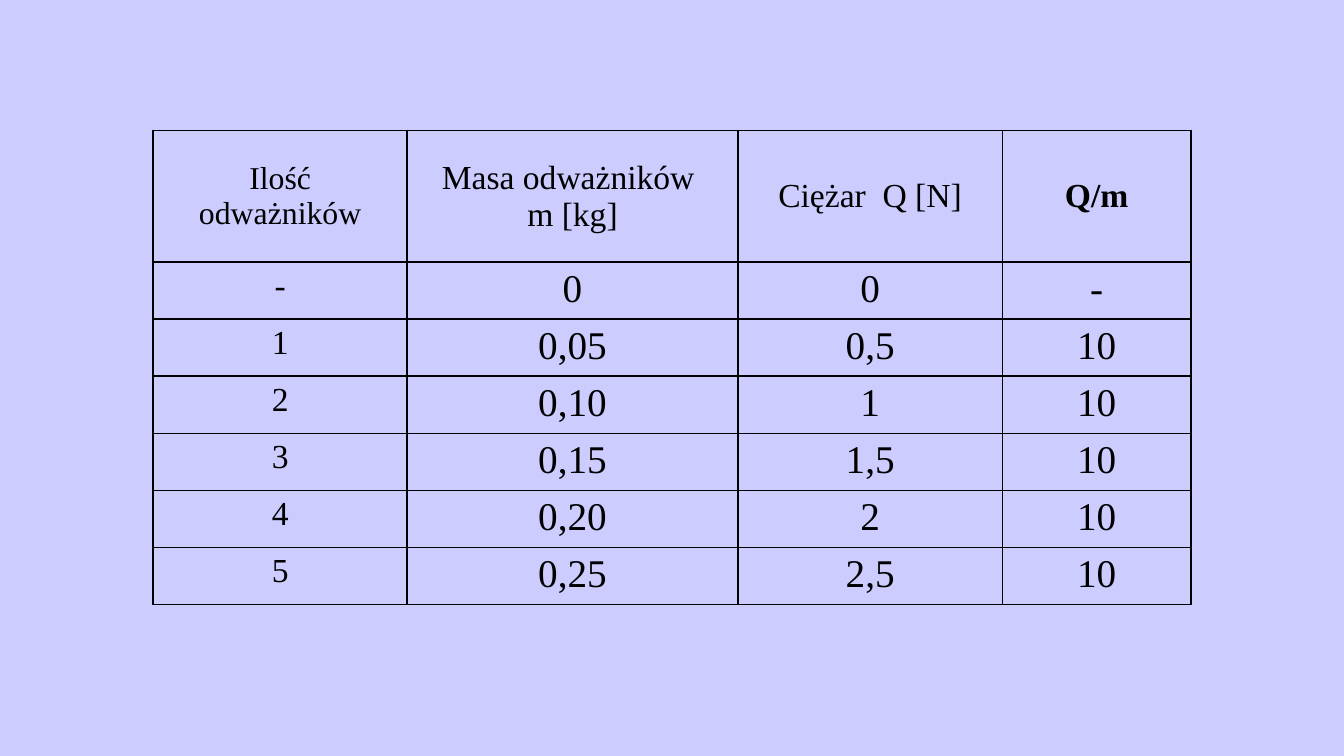
from dataclasses import dataclass

from lxml import etree
from pptx import Presentation
from pptx.dml.color import RGBColor
from pptx.enum.text import MSO_ANCHOR, PP_ALIGN
from pptx.oxml.ns import qn
from pptx.util import Inches, Pt

CENTER = PP_ALIGN.CENTER
MIDDLE = MSO_ANCHOR.MIDDLE
TOP = MSO_ANCHOR.TOP
BLANK_LAYOUT = 6


@dataclass(frozen=True)
class Theme:
    """Colours, font and type sizes of the slide."""
    background: str = "CCCCFF"
    ink: str = "000000"
    font: str = "Times New Roman"
    narrow_header: int = 17
    label: int = 18
    value: int = 21
    border: float = 1


THEME = Theme()
SLIDE_WIDTH = 10
SLIDE_HEIGHT = SLIDE_WIDTH * 9 / 16
HEADERS = ["Ilość odważników", "Masa odważników \vm [kg]", "Ciężar  Q [N]", "Q/m"]
MEASUREMENTS = [
    ["-", "0", "0", "-"],
    ["1", "0,05", "0,5", "10"],
    ["2", "0,10", "1", "10"],
    ["3", "0,15", "1,5", "10"],
    ["4", "0,20", "2", "10"],
    ["5", "0,25", "2,5", "10"],
]
COLUMN_WIDTHS = [1.89, 2.46, 1.97, 1.4]
TABLE_HEIGHT = 3.53
HEADER_HEIGHT = 0.98


def set_borders(cell):
    """Draw a thin line on all four sides of a cell."""
    properties = cell._tc.get_or_add_tcPr()
    for index, side in enumerate(("a:lnL", "a:lnR", "a:lnT", "a:lnB")):
        line = etree.Element(qn(side), w=str(Pt(THEME.border)))
        fill = etree.SubElement(line, qn("a:solidFill"))
        etree.SubElement(fill, qn("a:srgbClr"), val=THEME.ink)
        properties.insert(index, line)


def set_space_before(para, percent):
    """Set the space before a paragraph as a share of its line."""
    spacing = etree.Element(qn("a:spcBef"))
    etree.SubElement(spacing, qn("a:spcPct"), val=str(percent * 1000))
    para._p.get_or_add_pPr().insert(0, spacing)


def fill_cell(cell, text, size, anchor, bold=False):
    """Write centred text into a transparent, bordered cell."""
    cell.fill.background()
    set_borders(cell)
    cell.vertical_anchor = anchor
    cell.margin_left = cell.margin_right = Inches(0.1)
    cell.margin_top = cell.margin_bottom = Inches(0.04)
    cell.text_frame.text = text
    para = cell.text_frame.paragraphs[0]
    para.alignment = CENTER
    for span in para.runs:
        span.font.name = THEME.font
        span.font.size = Pt(size)
        span.font.bold = bold
        span.font.color.rgb = RGBColor.from_string(THEME.ink)


def add_measurement_table(page):
    """Add the table of masses, weights and their ratio."""
    frame = page.shapes.add_table(
        len(MEASUREMENTS) + 1, len(HEADERS), Inches(1.14), Inches(0.97),
        Inches(sum(COLUMN_WIDTHS)), Inches(TABLE_HEIGHT))
    table = frame.table
    table.first_row = table.horz_banding = False
    for column, width in zip(table.columns, COLUMN_WIDTHS):
        column.width = Inches(width)
    row_height = (TABLE_HEIGHT - HEADER_HEIGHT) / len(MEASUREMENTS)
    for index, row in enumerate(table.rows):
        row.height = Inches(row_height if index else HEADER_HEIGHT)

    for column, text in enumerate(HEADERS):
        size = THEME.label if column else THEME.narrow_header
        fill_cell(table.cell(0, column), text, size, MIDDLE, text == "Q/m")
    for row, values in enumerate(MEASUREMENTS, start=1):
        for column, text in enumerate(values):
            cell = table.cell(row, column)
            fill_cell(cell, text, THEME.value if column else THEME.label, TOP)
            if column:
                set_space_before(cell.text_frame.paragraphs[0], 20)


def main():
    """Build the slide and save the deck."""
    deck = Presentation()
    deck.slide_width, deck.slide_height = Inches(SLIDE_WIDTH), Inches(SLIDE_HEIGHT)
    page = deck.slides.add_slide(deck.slide_layouts[BLANK_LAYOUT])
    page.background.fill.solid()
    page.background.fill.fore_color.rgb = RGBColor.from_string(THEME.background)
    add_measurement_table(page)
    deck.save("out.pptx")


if __name__ == "__main__":
    main()
